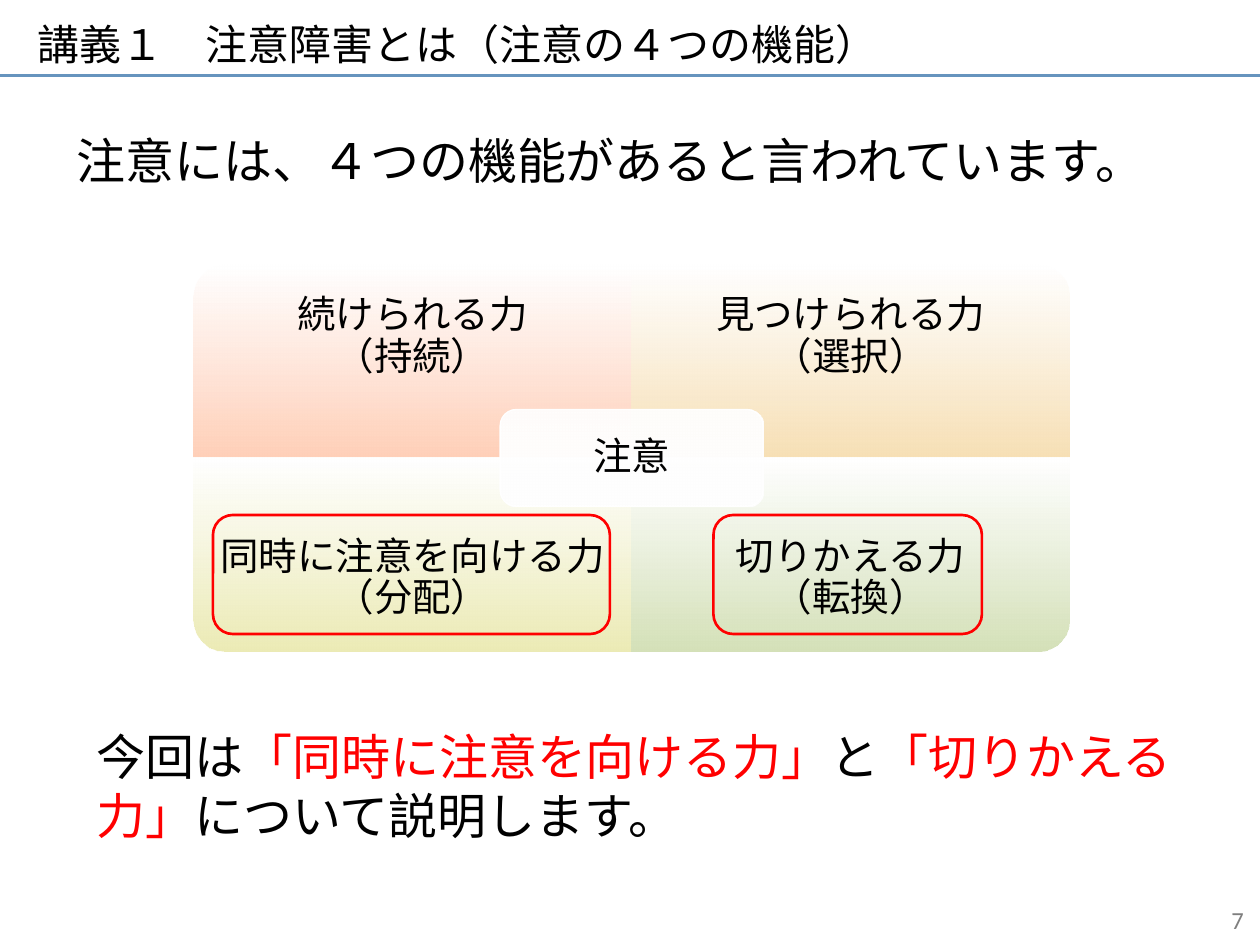
from lxml import etree
from pptx import Presentation
from pptx.dml.color import RGBColor
from pptx.enum.shapes import MSO_CONNECTOR, MSO_SHAPE
from pptx.enum.text import MSO_ANCHOR, PP_ALIGN
from pptx.oxml.ns import qn
from pptx.util import Pt

BLACK = RGBColor(0x00, 0x00, 0x00)
WHITE = RGBColor(0xFF, 0xFF, 0xFF)
RED = RGBColor(0xFF, 0x00, 0x00)
GRAY = RGBColor(0x7F, 0x7F, 0x7F)
BLUE = RGBColor(0x66, 0x94, 0xBE)
PEACH = RGBColor(0xFF, 0xD0, 0xB9)
AMBER = RGBColor(0xF7, 0xE0, 0xB6)
YELLOW = RGBColor(0xEC, 0xEB, 0xB6)
GREEN = RGBColor(0xD5, 0xE1, 0xB9)
LEFT, CENTER, RIGHT = PP_ALIGN.LEFT, PP_ALIGN.CENTER, PP_ALIGN.RIGHT
TOP, MIDDLE = MSO_ANCHOR.TOP, MSO_ANCHOR.MIDDLE
ROUNDED, ONE_ROUNDED = MSO_SHAPE.ROUNDED_RECTANGLE, MSO_SHAPE.ROUND_1_RECTANGLE
JAPANESE = "Noto Sans CJK JP"

deck = Presentation()
deck.slide_width, deck.slide_height = Pt(720), Pt(540)
slide = deck.slides.add_slide(deck.slide_layouts[6])
shapes = slide.shapes


def add_text(area, lines, size, align=LEFT, anchor=MIDDLE, spacing=1.0, inset=None, font=JAPANESE):
    box = shapes.add_textbox(*[Pt(length) for length in area])
    frame = box.text_frame
    frame.word_wrap = True
    frame.vertical_anchor = anchor
    if inset is not None:
        frame.margin_left = frame.margin_right = Pt(inset)
        frame.margin_top = frame.margin_bottom = Pt(inset)
    para = frame.paragraphs[0]
    para.alignment = align
    para.line_spacing = spacing
    for number, line in enumerate(lines):
        if number:
            para.add_line_break()
        for text, color in line:
            span = para.add_run()
            span.text = text
            span.font.size = Pt(size)
            span.font.name = font
            span.font.color.rgb = color
            east_asian = etree.SubElement(span.font._element, qn("a:ea"))
            east_asian.set("typeface", font)
    return para


def add_gradient_shape(kind, area, color, rotation=0):
    shape = shapes.add_shape(kind, *[Pt(length) for length in area])
    shape.shadow.inherit = False
    shape.rotation = rotation
    shape.line.fill.background()
    shape.fill.gradient()
    shape.fill.gradient_angle = 270
    for stop, stop_color in zip(shape.fill.gradient_stops, (WHITE, color)):
        stop.color.rgb = stop_color
    gradient = shape._element.spPr.find(qn("a:gradFill"))
    gradient.set("rotWithShape", "0")
    first_color = gradient.find(".//" + qn("a:srgbClr"))
    etree.SubElement(first_color, qn("a:alpha")).set("val", "94000")
    return shape


title = add_text((14.4, 3.6, 640, 51.1), [[("講義１　注意障害とは（注意の４つの機能）", BLACK)]], 24, spacing=0.6)
title._p.get_or_add_pPr().set("marL", str(Pt(48)))
title._p.get_or_add_pPr().set("indent", str(-Pt(48)))
add_text((550, 511.2, 167.8, 28.8), [[("7", GRAY)]], 14, align=RIGHT, font="Calibri")

rule = shapes.add_connector(MSO_CONNECTOR.STRAIGHT, Pt(0), Pt(43), Pt(720), Pt(43))
rule.line.color.rgb = BLUE
rule.line.width = Pt(1.5)
etree.SubElement(rule._element.spPr, qn("a:effectLst"))

grid_left, grid_top = 110.6, 151
cell_width, cell_height, label_height = 250.3, 110.6, 83
functions = [
    ("続けられる力", "（持続）", PEACH, 270),
    ("見つけられる力", "（選択）", AMBER, 0),
    ("同時に注意を向ける力", "（分配）", YELLOW, 180),
    ("切りかえる力", "（転換）", GREEN, 90),
]
for index, (power, term, color, rotation) in enumerate(functions):
    row, column = divmod(index, 2)
    left = grid_left + column * cell_width
    top = grid_top + row * cell_height
    width, height = (cell_height, cell_width) if rotation % 180 else (cell_width, cell_height)
    area = (left + (cell_width - width) / 2, top + (cell_height - height) / 2, width, height)
    add_gradient_shape(ONE_ROUNDED, area, color, rotation)
    label_top = top + row * (cell_height - label_height)
    add_text((left, label_top, cell_width, label_height), [[(power, BLACK)], [(term, BLACK)]],
             22, align=CENTER, spacing=0.9, inset=12.3)

hub = add_gradient_shape(ROUNDED, (285.8, 234, 150.2, 55.3), WHITE)
hub.line.color.rgb = WHITE
hub.line.width = Pt(0.75)
add_text((288.5, 236.7, 144.8, 49.9), [[("注意", BLACK)]], 22, align=CENTER, spacing=0.9, inset=6.6)

add_text((36.7, 71.3, 663, 102), [[("注意には、４つの機能があると言われています。", BLACK)]], 28, anchor=TOP)
summary = [
    ("今回は", BLACK),
    ("「同時に注意を向ける力」", RED),
    ("と", BLACK),
    ("「切りかえる力」", RED),
    ("について説明します。", BLACK),
]
add_text((48.2, 411.8, 657.4, 102), [summary], 28, anchor=TOP)

for left, width in ((121.7, 226.8), (407.7, 153.4)):
    frame = shapes.add_shape(ROUNDED, Pt(left), Pt(294.3), Pt(width), Pt(68))
    frame.shadow.inherit = False
    frame.fill.background()
    frame.line.color.rgb = RED
    frame.line.width = Pt(1.5)

deck.save("out.pptx")
